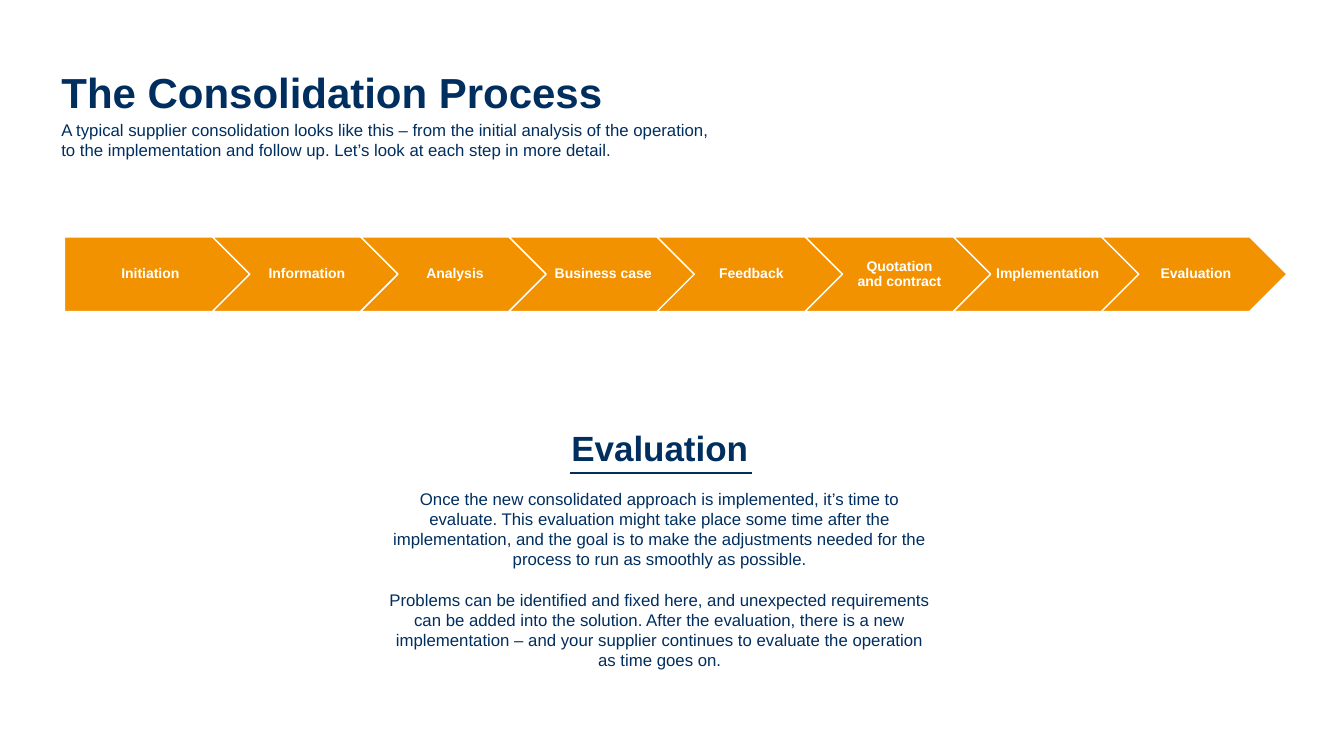
from lxml import etree
from pptx import Presentation
from pptx.dml.color import RGBColor
from pptx.enum import shapes, text
from pptx.oxml.ns import qn
from pptx.util import Pt

COLORS = {"navy": "002E5F", "orange": "F39200", "white": "FFFFFF"}
STEPS = ["Initiation", "Information", "Analysis", "Business case", "Feedback",
         "Quotation\nand contract", "Implementation", "Evaluation"]
SUBTITLE = ("A typical supplier consolidation looks like this – from the initial analysis of the operation,\n"
            "to the implementation and follow up. Let’s look at each step in more detail.")
DETAILS = [
    "Once the new consolidated approach is implemented, it’s time to\n"
    "evaluate. This evaluation might take place some time after the implementation, "
    "and the goal is to make the adjustments needed for the process to run as smoothly as possible.",
    "Problems can be identified and fixed here, and unexpected requirements\n"
    "can be added into the solution. After the evaluation, there is a new implementation "
    "– and your supplier continues to evaluate the operation\nas time goes on.",
]
STEP_LEFT, STEP_TOP, STEP_PITCH = 46, 169.2, 105.84
STEP_WIDTH, STEP_HEIGHT = 132.5, 53.3


def color(name):
    return RGBColor.from_string(COLORS[name])


def write(paragraph, content, size, color_name, bold=False, align=text.PP_ALIGN.LEFT):
    paragraph.text = content
    paragraph.alignment = align
    font = paragraph.font
    font.name = "Arial"
    font.size = Pt(size)
    font.bold = bold
    font.color.rgb = color(color_name)


def add_title(slide, content):
    title = slide.shapes.title
    title.left, title.top, title.width, title.height = Pt(36.7), Pt(40.3), Pt(846.7), Pt(56.2)
    frame = title.text_frame
    frame.vertical_anchor = text.MSO_ANCHOR.TOP
    frame.auto_size = text.MSO_AUTO_SIZE.NONE
    frame.margin_top = Pt(7.4)
    write(frame.paragraphs[0], content, 30, "navy", bold=True)


def add_text_box(slide, left, top, width, height):
    box = slide.shapes.add_textbox(Pt(left), Pt(top), Pt(width), Pt(height))
    box.text_frame.word_wrap = True
    return box.text_frame


def add_step(slide, index, label):
    kind = shapes.MSO_SHAPE.CHEVRON if index else shapes.MSO_SHAPE.PENTAGON
    shape = slide.shapes.add_shape(kind, Pt(STEP_LEFT + index * STEP_PITCH), Pt(STEP_TOP),
                                   Pt(STEP_WIDTH), Pt(STEP_HEIGHT))
    shape.shadow.inherit = False
    shape.fill.solid()
    shape.fill.fore_color.rgb = color("orange")
    shape.line.color.rgb = color("white")
    shape.line.width = Pt(1)
    frame = shape.text_frame
    frame.word_wrap = True
    frame.vertical_anchor = text.MSO_ANCHOR.MIDDLE
    frame.margin_left = Pt(2.9 if index else 4.3)
    frame.margin_right = Pt(0.7)
    frame.margin_top = frame.margin_bottom = Pt(2.2)
    paragraph = frame.paragraphs[0]
    write(paragraph, label, 10, "white", bold=True, align=text.PP_ALIGN.CENTER)
    paragraph.line_spacing = 0.9


def add_details(slide, heading, details):
    frame = add_text_box(slide, 258.5, 301, 425.5, 183)
    write(frame.paragraphs[0], heading, 25, "navy", bold=True, align=text.PP_ALIGN.CENTER)
    for detail in details:
        paragraph = frame.add_paragraph()
        write(paragraph, detail, 12, "navy", align=text.PP_ALIGN.CENTER)
        paragraph.space_before = Pt(14.4)


def add_rule(slide, left, right, top):
    rule = slide.shapes.add_connector(shapes.MSO_CONNECTOR.STRAIGHT,
                                      Pt(left), Pt(top), Pt(right), Pt(top))
    rule.line.color.rgb = color("navy")
    rule.line.width = Pt(1.25)
    etree.SubElement(rule._element.spPr, qn("a:effectLst"))


def main():
    presentation = Presentation()
    presentation.slide_width, presentation.slide_height = Pt(960), Pt(540)
    slide = presentation.slides.add_slide(presentation.slide_layouts[5])
    for index, label in enumerate(STEPS):
        add_step(slide, index, label)
    add_title(slide, "The Consolidation Process")
    subtitle = add_text_box(slide, 36.7, 82.1, 882.7, 36)
    write(subtitle.paragraphs[0], SUBTITLE, 12, "navy")
    add_details(slide, "Evaluation", DETAILS)
    add_rule(slide, 407.5, 537.1, 337.7)
    presentation.save("out.pptx")


if __name__ == "__main__":
    main()
